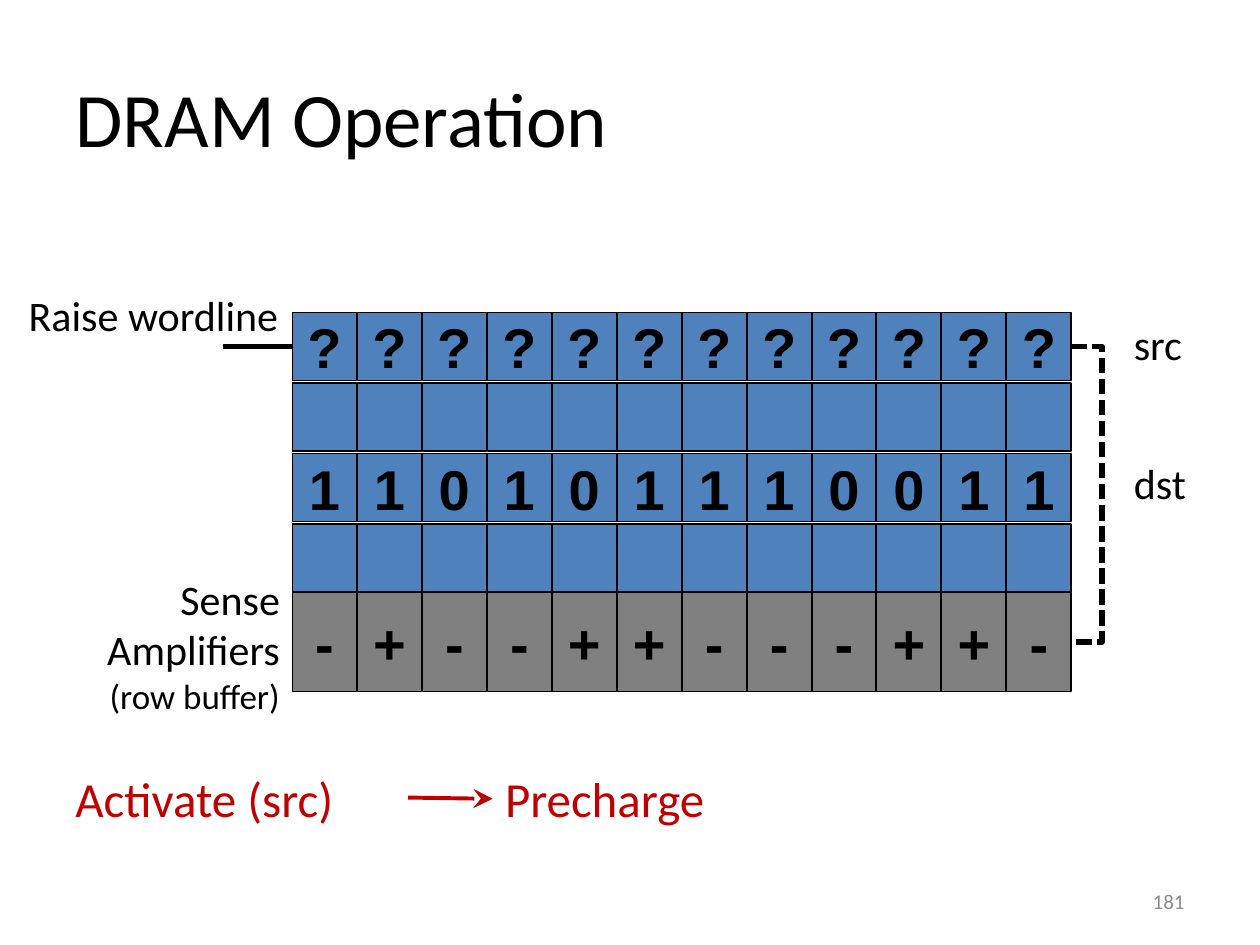
"""Build the DRAM Operation slide: a cell array, its sense amplifiers and labels."""
from pptx import Presentation
from pptx.dml.color import RGBColor
from pptx.enum.dml import MSO_LINE
from pptx.enum.shapes import MSO_CONNECTOR as Connector, MSO_SHAPE as Shape
from pptx.enum.text import MSO_ANCHOR as Anchor, PP_ALIGN as Align
from pptx.oxml.ns import qn
from pptx.util import Inches, Pt
from lxml.etree import SubElement

BLACK = RGBColor(0x00, 0x00, 0x00)
BLUE = RGBColor(0x4F, 0x81, 0xBD)
GRAY = RGBColor(0x80, 0x80, 0x80)
RED = RGBColor(0xC0, 0x00, 0x00)
PALE = RGBColor(0x8C, 0x8C, 0x8C)

MEMORY_ROWS = ["????????????", " " * 12, "110101110011", " " * 12]
SENSE_ROW = "-+--++---++-"

GRID_LEFT, GRID_TOP = 2.32, 2.48
COLUMN_STEP, ROW_STEP = 0.52, 0.56
COLUMN_STEP = (7.99 - GRID_LEFT) / (len(SENSE_ROW) - 1)
CELL_WIDTH, CELL_HEIGHT, SENSE_HEIGHT = 0.51, 0.54, 0.79
SENSE_TOP = 4.7
GRID_RIGHT = 8.5
SOURCE_MIDDLE = GRID_TOP + CELL_HEIGHT / 2
SENSE_MIDDLE = SENSE_TOP + SENSE_HEIGHT / 2
LINK_WIDTH, LINK_REACH = 0.01, 0.25

LABELS = [
    {"lines": [("DRAM Operation", 44)], "box": (0.5, 0.3, 9, 1.25), "anchor": Anchor.MIDDLE},
    {"lines": [("Activate (src)", 28)], "box": (0.5, 6.05, 2.49, 0.57), "color": RED, "wrap": False},
    {"lines": [("Precharge", 28)], "box": (3.91, 6.05, 2.02, 0.57), "color": RED, "wrap": False},
    {"lines": [("Raise wordline", 24)], "box": (0.13, 2.25, 2.2, 0.5), "wrap": False},
    {"lines": [("Sense Amplifiers", 24), ("(row buffer)", 20)],
     "box": (0.29, 4.5, 2.03, 1.25), "align": Align.RIGHT},
    {"lines": [("src", 24)], "box": (8.9, 2.48, 0.65, 0.5), "wrap": False},
    {"lines": [("dst", 24)], "box": (8.9, 3.58, 0.65, 0.5), "wrap": False},
    {"lines": [("181", 12)], "box": (7.17, 6.95, 2.33, 0.4), "color": PALE,
     "anchor": Anchor.MIDDLE, "align": Align.RIGHT},
]


def set_attributes(target, values):
    for name, value in values.items():
        setattr(target, name, value)


def write_lines(shape, lines, color, align, font="Calibri", bold=False):
    frame = shape.text_frame
    for index, (text, size) in enumerate(lines):
        paragraph = frame.add_paragraph() if index else frame.paragraphs[0]
        paragraph.alignment = align
        run = paragraph.add_run()
        run.text = text
        set_attributes(run.font, {"name": font, "size": Pt(size), "bold": bold})
        run.font.color.rgb = color


def add_label(slide, lines, box, color=BLACK, wrap=True, anchor=Anchor.TOP, align=Align.LEFT):
    label = slide.shapes.add_textbox(*map(Inches, box))
    set_attributes(label.text_frame, {"word_wrap": wrap, "vertical_anchor": anchor})
    write_lines(label, lines, color, align)


def add_cell_row(slide, symbols, top, height, fill):
    for column, symbol in enumerate(symbols):
        box = (GRID_LEFT + column * COLUMN_STEP, top, CELL_WIDTH, height)
        cell = slide.shapes.add_shape(Shape.RECTANGLE, *map(Inches, box))
        cell.shadow.inherit = False
        cell.fill.solid()
        cell.fill.fore_color.rgb = fill
        cell.line.color.rgb = BLACK
        cell.line.width = Pt(0.75)
        set_attributes(cell.text_frame, {
            "margin_left": 0, "margin_right": 0, "vertical_anchor": Anchor.MIDDLE})
        if symbol.strip():
            write_lines(cell, [(symbol, 32)], BLACK, Align.CENTER, "Arial", True)


def add_line(slide, start, end, color, width, kind=Connector.STRAIGHT):
    connector = slide.shapes.add_connector(kind, *map(Inches, (*start, *end)))
    connector.line.color.rgb = color
    connector.line.width = Pt(width)
    SubElement(connector._element.spPr, qn("a:effectLst"))
    return connector


def main():
    presentation = Presentation()
    set_attributes(presentation, {"slide_width": Inches(10), "slide_height": Inches(7.5)})
    slide = presentation.slides.add_slide(presentation.slide_layouts[6])

    for row, symbols in enumerate(MEMORY_ROWS):
        add_cell_row(slide, symbols, GRID_TOP + row * ROW_STEP, CELL_HEIGHT, BLUE)
    add_cell_row(slide, SENSE_ROW, SENSE_TOP, SENSE_HEIGHT, GRAY)

    for label in LABELS:
        add_label(slide, **label)

    add_line(slide, (GRID_LEFT, SOURCE_MIDDLE), (1.77, SOURCE_MIDDLE), BLACK, 3)
    arrow = add_line(slide, (3.24, 6.33), (3.91, 6.34), RED, 2.25)
    SubElement(arrow.line._get_or_add_ln(), qn("a:tailEnd"), type="stealth", w="lg", len="lg")

    link = add_line(slide, (GRID_RIGHT, SOURCE_MIDDLE), (GRID_RIGHT + LINK_WIDTH, SENSE_MIDDLE),
                    BLACK, 3, Connector.ELBOW)
    link.line.dash_style = MSO_LINE.SQUARE_DOT
    bend = round(LINK_REACH / LINK_WIDTH * 100000)
    guides = link._element.spPr.find(qn("a:prstGeom")).get_or_add_avLst()
    SubElement(guides, qn("a:gd"), name="adj1", fmla=f"val {bend}")

    presentation.save("out.pptx")


if __name__ == "__main__":
    main()
